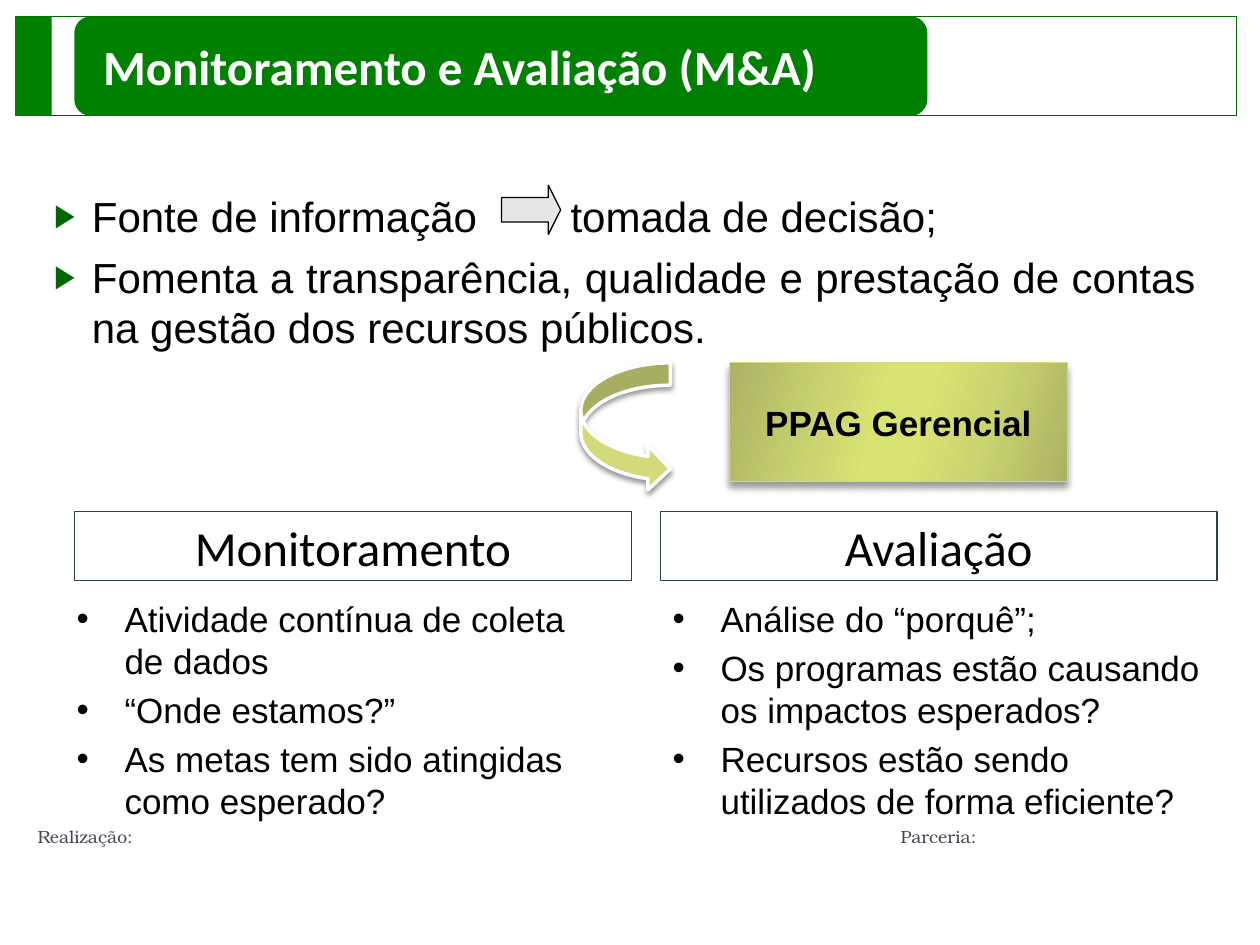
from lxml.etree import SubElement
from pptx import Presentation
from pptx.dml.color import RGBColor
from pptx.enum.shapes import MSO_SHAPE
from pptx.enum.text import MSO_ANCHOR, PP_ALIGN
from pptx.oxml.ns import qn
from pptx.util import Inches, Pt


def color(hex_value):
    return RGBColor.from_string(hex_value)


def add_panel(slide, preset, box, fill=None, line=None, line_width=0.75):
    panel = slide.shapes.add_shape(preset, *map(Inches, box))
    panel.shadow.inherit = False
    if fill:
        panel.fill.solid()
        panel.fill.fore_color.rgb = color(fill)
    else:
        panel.fill.background()
    if line:
        panel.line.color.rgb = color(line)
        panel.line.width = Pt(line_width)
    else:
        panel.line.fill.background()
    return panel


def add_text_area(slide, box):
    frame = slide.shapes.add_textbox(*map(Inches, box)).text_frame
    frame.word_wrap = True
    return frame


def style(paragraph, size, font_name="Arial", hex_value="000000", bold=False, align=PP_ALIGN.LEFT):
    paragraph.alignment = align
    paragraph.font.size = Pt(size)
    paragraph.font.name = font_name
    paragraph.font.bold = bold
    paragraph.font.color.rgb = color(hex_value)


def set_caption(panel, text, size, font_name, **options):
    frame = panel.text_frame
    frame.word_wrap = True
    paragraph = frame.paragraphs[0]
    paragraph.text = text
    style(paragraph, size, font_name, **options)
    return frame


def add_bullet(paragraph, symbol, indent, hex_value=None, percent=100):
    properties = paragraph._p.get_or_add_pPr()
    properties.set("marL", str(Inches(indent)))
    properties.set("indent", str(-Inches(indent)))
    if hex_value:
        bullet_color = SubElement(properties, qn("a:buClr"))
        SubElement(bullet_color, qn("a:srgbClr"), val=hex_value)
    SubElement(properties, qn("a:buSzPct"), val=str(percent * 1000))
    SubElement(properties, qn("a:buFont"), typeface="Arial")
    SubElement(properties, qn("a:buChar"), char=symbol)


def add_bullets(frame, items, size, symbol, indent, gap, align=PP_ALIGN.LEFT, **bullet):
    for position, item in enumerate(items):
        paragraph = frame.paragraphs[0] if position == 0 else frame.add_paragraph()
        paragraph.text = item
        add_bullet(paragraph, symbol, indent, **bullet)
        if position:
            paragraph.space_before = Pt(gap)
        style(paragraph, size, align=align)


def cast_shadow(panel, blur, distance):
    effects = panel._element.spPr.find(qn("a:effectLst"))
    shadow = SubElement(effects, qn("a:outerShdw"), blurRad=str(Pt(blur)),
                        dist=str(Pt(distance)), dir="5400000", rotWithShape="0")
    shade = SubElement(shadow, qn("a:srgbClr"), val="000000")
    SubElement(shade, qn("a:alpha"), val="40000")


def fill_gradient(panel, stops, angle):
    panel.fill.gradient()
    gradient = panel._element.spPr.find(qn("a:gradFill"))
    stop_list = gradient.find(qn("a:gsLst"))
    for stop in list(stop_list):
        stop_list.remove(stop)
    for percent, hex_value in stops:
        stop = SubElement(stop_list, qn("a:gs"), pos=str(percent * 1000))
        SubElement(stop, qn("a:srgbClr"), val=hex_value)
    gradient.find(qn("a:lin")).set("ang", str(angle * 60000))


def add_header(slide, box, title):
    left, top, width, height = box
    add_panel(slide, MSO_SHAPE.RECTANGLE, box, line="006600", line_width=0.5)
    add_panel(slide, MSO_SHAPE.RECTANGLE, (left, top, 0.29, height), "008000")
    banner = add_panel(slide, MSO_SHAPE.ROUNDED_RECTANGLE,
                       (left + 0.47, top, 6.77, height), "008000")
    frame = set_caption(banner, title, 28, "Calibri", hex_value="FFFFFF", bold=True)
    frame.margin_left = Inches(0.19)
    frame.vertical_anchor = MSO_ANCHOR.MIDDLE


def add_footer(slide, box, labels):
    paragraph = add_text_area(slide, box).paragraphs[0]
    paragraph.text = "\t".join(labels)
    tabs = SubElement(paragraph._p.get_or_add_pPr(), qn("a:tabLst"))
    SubElement(tabs, qn("a:tab"), pos=str(Inches(6.85)), algn="l")
    style(paragraph, 10, "TeX Gyre Bonum", "464653")


def add_purpose(slide, box, cause, effect, benefit):
    left, top, width, height = box
    frame = add_text_area(slide, box)
    frame.margin_left = frame.margin_right = frame.margin_bottom = 0
    frame.margin_top = Inches(0.44)
    add_bullets(frame, [cause, benefit], 24, "▶", 0.3, 6, PP_ALIGN.JUSTIFY,
                hex_value="006600", percent=76)
    flow = frame.paragraphs[0]
    arrow_gap = flow.add_run()
    arrow_gap.text = " "
    arrow_gap.font._element.set("spc", "4670")
    flow.add_run().text = effect
    arrow = add_panel(slide, MSO_SHAPE.RIGHT_ARROW,
                      (left + 3.55, top + 0.4, 0.47, 0.39), "E6E6E6", "000000")
    arrow.adjustments[0] = 0.5
    arrow.adjustments[1] = 0.25


def add_program(slide, box, name):
    left, top, width, height = box
    program = add_panel(slide, MSO_SHAPE.RECTANGLE,
                        (left + 1.18, top, width - 1.18, 0.94), line="D2DA7A")
    fill_gradient(program, [(0, "ACB264"), (30, "CCD570"), (45, "D9E371"),
                            (55, "D9E371"), (73, "CCD570"), (100, "ACB264")], 16)
    cast_shadow(program, 4, 3.4)
    frame = set_caption(program, name, 20, "Arial", bold=True, align=PP_ALIGN.CENTER)
    frame.vertical_anchor = MSO_ANCHOR.MIDDLE
    turn = add_panel(slide, MSO_SHAPE.CURVED_RIGHT_ARROW,
                     (left, top, 0.71, height), "D2DA7A", "FFFFFF", 2)
    cast_shadow(turn, 3, 2)


def add_column(slide, box, heading, items, list_shift=0):
    left, top, width, height = box
    title = add_panel(slide, MSO_SHAPE.RECTANGLE, (left, top, width, 0.55), line="294349")
    frame = set_caption(title, heading, 28, "Calibri", align=PP_ALIGN.CENTER)
    frame.vertical_anchor = MSO_ANCHOR.TOP
    details = add_text_area(slide, (left + list_shift, top + 0.63, width, height - 0.63))
    add_bullets(details, items, 20, "•", 0.38, 4)


def main():
    presentation = Presentation()
    presentation.slide_width = Inches(10)
    presentation.slide_height = Inches(7.5)
    slide = presentation.slides.add_slide(presentation.slide_layouts[6])
    add_header(slide, (0.12, 0.13, 9.69, 0.79), "Monitoramento e Avaliação (M&A)")
    add_footer(slide, (0.2, 6.51, 9.55, 0.31), ["Realização:", "Parceria:"])
    add_purpose(slide, (0.43, 1.07, 9.06, 5.26),
                "Fonte de informação", "tomada de decisão;",
                "Fomenta a transparência, qualidade e prestação de contas "
                "na gestão dos recursos públicos.")
    add_program(slide, (4.61, 2.88, 3.86, 1.02), "PPAG Gerencial")
    add_column(slide, (0.59, 4.06, 4.42, 2.6), "Monitoramento",
               ["Atividade contínua de coleta de dados", "“Onde estamos?”",
                "As metas tem sido atingidas como esperado?"], -0.08)
    add_column(slide, (5.24, 4.06, 4.42, 2.6), "Avaliação",
               ["Análise do “porquê”;",
                "Os programas estão causando os impactos esperados?",
                "Recursos estão sendo utilizados de forma eficiente?"])
    presentation.save("out.pptx")


if __name__ == "__main__":
    main()
